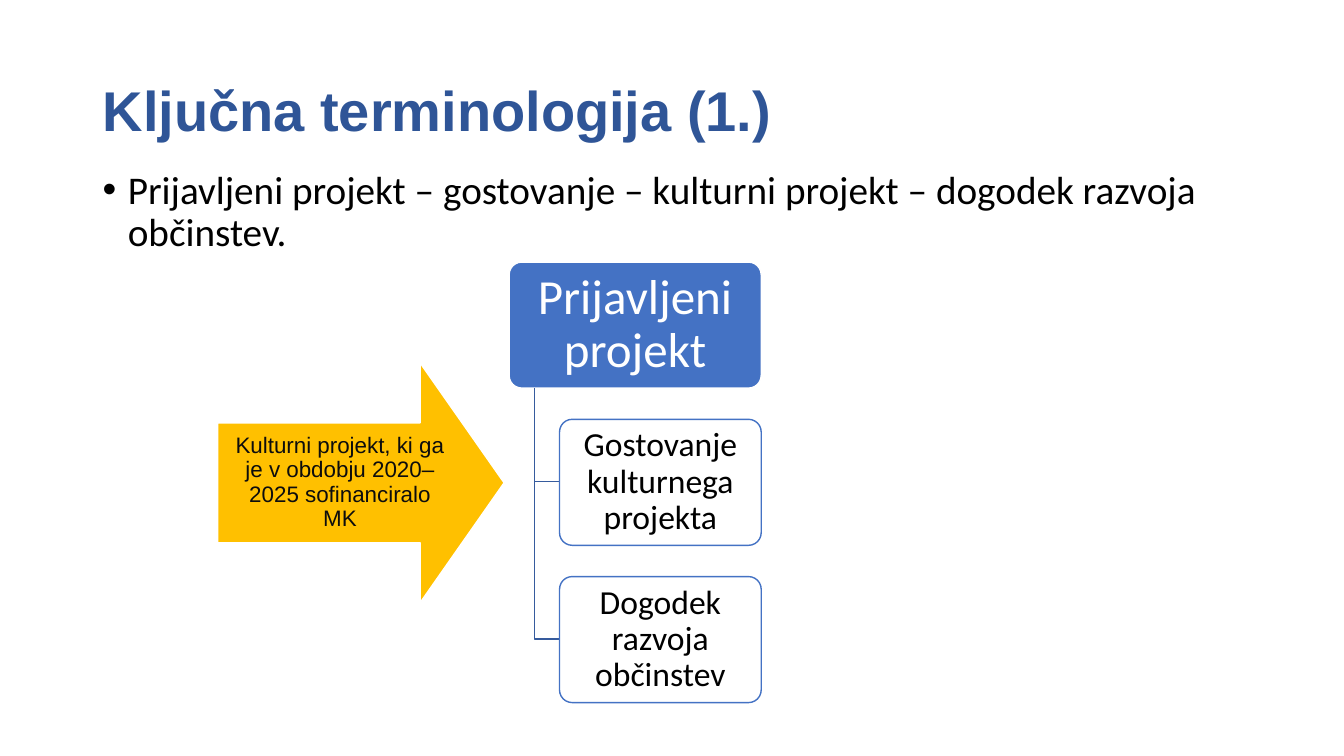
from lxml import etree
from pptx import Presentation
from pptx import util as u
from pptx.dml.color import RGBColor
from pptx.enum import shapes, text
from pptx.oxml.ns import qn

# Content
TITLE = "Ključna terminologija (1.)"
BULLET = "Prijavljeni projekt – gostovanje – kulturni projekt – dogodek razvoja občinstev."
PARENT = "Prijavljeni projekt"
CHILDREN = ["Gostovanje kulturnega projekta", "Dogodek razvoja občinstev"]
ARROW = "Kulturni projekt, ki ga je v obdobju 2020–2025 sofinanciralo MK"

# Colours
WHITE = RGBColor(0xFF, 0xFF, 0xFF)
BLACK = RGBColor(0x00, 0x00, 0x00)
NEAR_BLACK = RGBColor(0x0D, 0x0D, 0x0D)
TITLE_BLUE = RGBColor(0x2F, 0x55, 0x97)
BLUE = RGBColor(0x44, 0x72, 0xC4)
LINE_BLUE = RGBColor(0x36, 0x5B, 0x9D)
GOLD = RGBColor(0xFF, 0xC0, 0x00)

# Layout in px, 100 px to the inch
PX = 9144
PARENT_X, PARENT_Y, PARENT_W, BOX_H = 505, 260, 250, 125
INDENT = 25
CHILD_W = PARENT_W - 2 * INDENT
PITCH = 156


def px(*lengths):
    return [u.Emu(length * PX) for length in lengths]


def write(shape, words, font, size, color, align, anchor, insets):
    frame = shape.text_frame
    frame.text = words
    frame.word_wrap = True
    frame.auto_size = text.MSO_AUTO_SIZE.NONE
    frame.vertical_anchor = anchor
    horizontal, vertical = px(*insets)
    frame.margin_left = frame.margin_right = horizontal
    frame.margin_top = frame.margin_bottom = vertical
    paragraph = frame.paragraphs[0]
    paragraph.alignment = align
    paragraph.line_spacing = 0.9
    run_font = paragraph.runs[0].font
    run_font.name, run_font.size, run_font.color.rgb = font, u.Pt(size), color
    return paragraph


def add_block(slide, kind, box, adjustments, fill, line, words, font, size, color, insets):
    shape = slide.shapes.add_shape(kind, *px(*box))
    shape.shadow.inherit = False
    for index, value in enumerate(adjustments):
        shape.adjustments[index] = value
    shape.fill.solid()
    shape.fill.fore_color.rgb = fill
    shape.line.color.rgb = line
    shape.line.width = u.Pt(1)
    write(shape, words, font, size, color, text.PP_ALIGN.CENTER, text.MSO_ANCHOR.MIDDLE, insets)
    return shape


def add_branch(slide, child_middle):
    x, top = PARENT_X + INDENT, PARENT_Y + BOX_H
    builder = slide.shapes.build_freeform(x, top, scale=PX)
    builder.add_line_segments([(x, child_middle), (x + INDENT, child_middle)], close=False)
    branch = builder.convert_to_shape()
    branch.shadow.inherit = False
    branch.fill.background()
    branch.line.color.rgb = LINE_BLUE
    branch.line.width = u.Pt(1)


def main():
    presentation = Presentation()
    presentation.slide_width, presentation.slide_height = u.Inches(13.33), u.Inches(7.5)
    slide = presentation.slides.add_slide(presentation.slide_layouts[5])

    # Title
    title = slide.shapes.title
    title.left, title.top, title.width, title.height = px(92, 40, 1150, 145)
    paragraph = write(title, TITLE, "Arial", 40, TITLE_BLUE,
                      text.PP_ALIGN.LEFT, text.MSO_ANCHOR.MIDDLE, (10, 5))
    paragraph.runs[0].font.bold = True

    # Bullet line
    body = slide.shapes.add_textbox(*px(92, 164, 1150, 136))
    paragraph = write(body, BULLET, "Calibri", 28, BLACK,
                      text.PP_ALIGN.LEFT, text.MSO_ANCHOR.TOP, (10, 5))
    paragraph.space_before = u.Pt(10)
    properties = paragraph._p.get_or_add_pPr()
    properties.set("marL", str(INDENT * PX))
    properties.set("indent", str(-INDENT * PX))
    etree.SubElement(properties, qn("a:buFont"), typeface="Arial")
    etree.SubElement(properties, qn("a:buChar"), char="•")

    # Hierarchy
    rounded = shapes.MSO_SHAPE.ROUNDED_RECTANGLE
    add_block(slide, rounded, (PARENT_X, PARENT_Y, PARENT_W, BOX_H), [0.1], BLUE, WHITE,
              PARENT, "Calibri", 35, WHITE, (7, 5))
    for row, words in enumerate(CHILDREN, start=1):
        top = PARENT_Y + row * PITCH
        add_branch(slide, top + BOX_H // 2)
        child = add_block(slide, rounded, (PARENT_X + 2 * INDENT, top, CHILD_W, BOX_H), [0.1],
                          WHITE, BLUE, words, "Calibri", 24, BLACK, (5, 3))
        fill_color = child._element.spPr.find(qn("a:solidFill"))[0]
        etree.SubElement(fill_color, qn("a:alpha"), val="90000")

    # Arrow
    add_block(slide, shapes.MSO_SHAPE.RIGHT_ARROW, (216, 360, 284, 238), [0.5, 0.35], GOLD, WHITE,
              ARROW, "Arial", 16, NEAR_BLACK, (12, 12))

    presentation.save("out.pptx")


if __name__ == "__main__":
    main()
